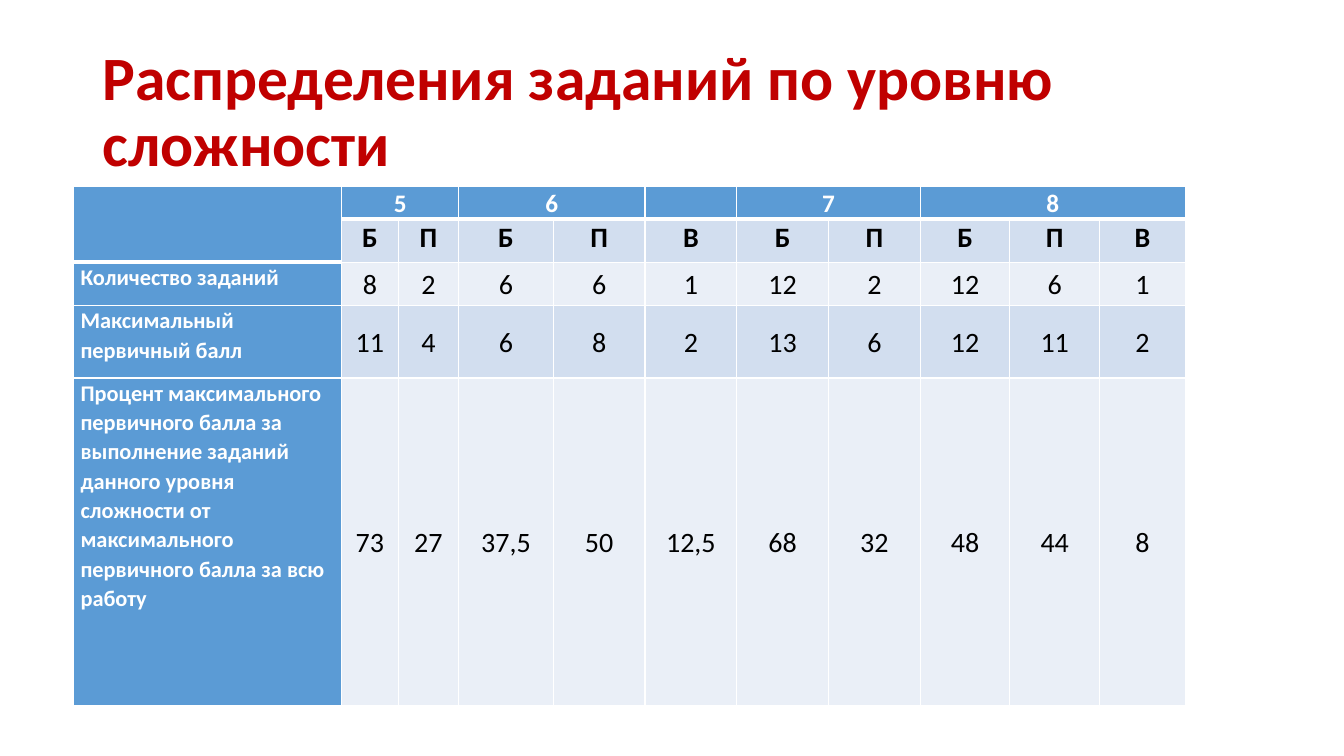
"""Slide with a table of tasks by level of difficulty."""
from dataclasses import dataclass

from lxml import etree
from pptx import Presentation, util as u
from pptx.dml.color import RGBColor
from pptx.enum import text
from pptx.oxml import ns


@dataclass(frozen=True)
class Theme:
    font: str = "Calibri"
    title: str = "C00000"
    head: str = "5B9BD5"
    bands: tuple = ("D2DEEF", "EAEFF7")
    white: str = "FFFFFF"
    black: str = "000000"
    big: int = 44
    group: int = 18
    value: int = 20
    label: int = 16
    thin: int = 1
    thick: int = 3


class Deck:
    def __init__(self, theme, cols, rows, unit):
        self.theme, self.unit = theme, unit
        self.prs = Presentation()
        self.prs.slide_width, self.prs.slide_height = self.span(cols), self.span(rows)
        self.slide = self.prs.slides.add_slide(self.prs.slide_layouts[6])

    def span(self, count):
        return u.Inches(count * self.unit)

    def label(self, frame, words, size, color, bold, space, align):
        para = frame.paragraphs[0]
        para.line_spacing, para.alignment = space, align
        if not words:
            para.font.size = u.Pt(size)
            return
        run = para.add_run()
        run.text = words
        font = run.font
        font.name, font.size, font.bold = self.theme.font, u.Pt(size), bold
        font.color.rgb = RGBColor.from_string(color)

    def title(self, words, *box):
        frame = self.slide.shapes.add_textbox(*map(self.span, box)).text_frame
        frame.word_wrap = True
        frame.vertical_anchor = text.MSO_ANCHOR.MIDDLE
        self.label(frame, words, self.theme.big, self.theme.title, True, 0.9,
                   text.PP_ALIGN.LEFT)

    def edge(self, cell, side, width):
        props = cell._tc.get_or_add_tcPr()
        line = etree.SubElement(props, ns.qn("a:ln" + side), w=str(u.Pt(width)))
        fill = etree.SubElement(line, ns.qn("a:solidFill"))
        etree.SubElement(fill, ns.qn("a:srgbClr"), val=self.theme.white)

    def cell(self, cell, row, col, words):
        look = self.theme
        top = look.thick if row == 1 or (row == 2 and col == 0) else look.thin
        low = look.thick if row == 0 or (row == 1 and col == 0) else look.thin
        for side, width in zip("LRTB", (look.thin, look.thin, top, low)):
            self.edge(cell, side, width)
        head = row == 0 or col == 0
        shade = look.head if head else look.bands[(row - 1) % 2]
        cell.fill.solid()
        cell.fill.fore_color.rgb = RGBColor.from_string(shade)
        cell.margin_left = cell.margin_right = u.Inches(0.07)
        cell.margin_top = cell.margin_bottom = 0
        value = row > 1 and col > 0
        cell.vertical_anchor = text.MSO_ANCHOR.MIDDLE if value else text.MSO_ANCHOR.TOP
        size = look.group if row == 0 else look.label if col == 0 else look.value
        align = text.PP_ALIGN.CENTER if col else text.PP_ALIGN.LEFT
        self.label(cell.text_frame, words, size, look.white if head else look.black,
                   not value, 1.07, align)

    def table(self, data, left, top, widths, heights, merges):
        box = map(self.span, (left, top, sum(widths), sum(heights)))
        grid = self.slide.shapes.add_table(len(heights), len(widths), *box).table
        grid.first_row = grid.horz_banding = False
        for col, width in zip(grid.columns, widths):
            col.width = self.span(width)
        for row, height in zip(grid.rows, heights):
            row.height = self.span(height)
        for r, line in enumerate(data):
            for c, words in enumerate(line):
                self.cell(grid.cell(r, c), r, c, words)
        for start, end in merges:
            grid.cell(*start).merge(grid.cell(*end))


DATA = [
    ["", "5", "", "6", "", "", "7", "", "8", "", ""],
    ["", *"БПБПВБПБПВ"],
    ["Количество заданий", *"8 2 6 6 1 12 2 12 6 1".split()],
    ["Максимальный первичный балл", *"11 4 6 8 2 13 6 12 11 2".split()],
    ["Процент максимального первичного балла за выполнение заданий данного "
     "уровня сложности от максимального первичного балла за всю работу",
     *"73 27 37,5 50 12,5 68 32 48 44 8".split()],
]
WIDTHS = [26.6, 5.6, 6, 9.4, *[9.1] * 4, 8.9, 8.9, 8.5]
HEIGHTS = [3.1, 4.3, 4.3, 7.2, 32.5]
MERGES = [((0, 0), (1, 0)), ((0, 1), (0, 2)), ((0, 3), (0, 4)),
          ((0, 6), (0, 7)), ((0, 8), (0, 10))]


def main():
    deck = Deck(Theme(), 133.33, 75, 0.1)
    deck.title("Распределения заданий по уровню сложности", 9.2, 4, 115, 14.5)
    deck.table(DATA, 7.3, 18.5, WIDTHS, HEIGHTS, MERGES)
    deck.prs.save("out.pptx")


if __name__ == "__main__":
    main()
